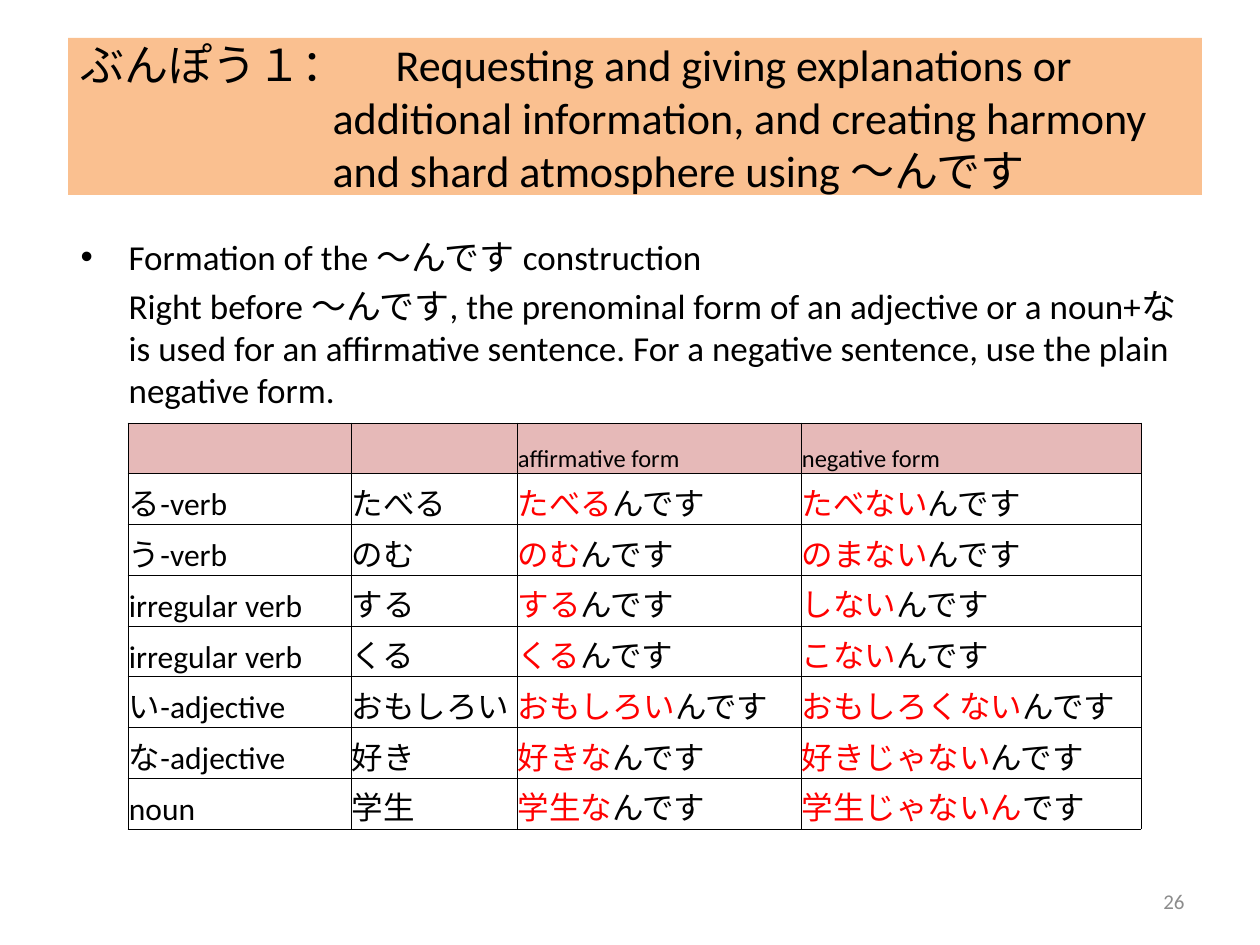
from lxml.etree import SubElement
from pptx import Presentation
from pptx.dml.color import RGBColor
from pptx.enum.text import MSO_ANCHOR, MSO_AUTO_SIZE, PP_ALIGN
from pptx.oxml.ns import qn
from pptx.util import Emu, Pt

SCALE = 914400 / 126
BLACK, RED, GREY, ORANGE, PINK = "000000", "FF0000", "8C8C8C", "FAC090", "E6B9B8"
LATIN, JAPANESE = "Calibri", "Arial"

TITLE_LINES = [
    "ぶんぽう１：\tRequesting and giving explanations or ",
    "\t\t\t\tadditional information, and creating harmony",
    "\t\t\t \tand shard atmosphere using ～んです",
]
BODY_PARAGRAPHS = [
    ["Formation of the ", "～んです", " construction"],
    ["Right before ", "～んです", ", the prenominal form of an adjective or a noun+な is used for "
     "an affirmative sentence. For a negative sentence, use the plain negative form."],
]
HEADERS = ["", "", "affirmative form", "negative form"]
FORMS = [
    ("る-verb", "たべる", ("たべる", "んです"), ("たべない", "んです")),
    ("う-verb", "のむ", ("のむ", "んです"), ("のまない", "んです")),
    ("irregular verb", "する", ("する", "んです"), ("しない", "んです")),
    ("irregular verb", "くる", ("くる", "んです"), ("こない", "んです")),
    ("い-adjective", "おもしろい", ("おもしろい", "んです"), ("おもしろくない", "んです")),
    ("な-adjective", "好き", ("好きな", "んです"), ("好きじゃない", "んです")),
    ("noun", "学生", ("学生な", "んです"), ("学生じゃないん", "です")),
]
COLUMN_WIDTHS = [223, 166, 284, 340]


def px(length):
    """Turn pixels into EMU."""
    return Emu(round(length * SCALE))


def color(value):
    """Turn a hex string into a colour."""
    return RGBColor.from_string(value)


def add_span(para, text, size, font=LATIN, ink=BLACK):
    """Add one formatted run to a paragraph."""
    span = para.add_run()
    span.text = text
    span.font.size = Pt(size)
    span.font.name = font
    span.font.color.rgb = color(ink)


def place(shape, box):
    """Move a shape to a box and return its text frame, fixed in size."""
    shape.left, shape.top, shape.width, shape.height = map(px, box)
    frame = shape.text_frame
    frame.word_wrap = True
    frame.auto_size = MSO_AUTO_SIZE.NONE
    return frame


def fill_title(shape, box):
    """Write the grammar heading on its orange band."""
    frame = place(shape, box)
    frame.vertical_anchor = MSO_ANCHOR.MIDDLE
    shape.fill.solid()
    shape.fill.fore_color.rgb = color(ORANGE)
    para = frame.paragraphs[0]
    para.alignment = PP_ALIGN.LEFT
    for index, line in enumerate(TITLE_LINES):
        if index:
            para.add_line_break()
        add_span(para, line, 25.2)


def fill_body(shape, box):
    """Write the bulleted heading and the explanation under it."""
    frame = place(shape, box)
    for index, texts in enumerate(BODY_PARAGRAPHS):
        para = frame.add_paragraph() if index else frame.paragraphs[0]
        for text, font in zip(texts, (LATIN, JAPANESE, LATIN)):
            add_span(para, text, 20, font)
        properties = para._p.get_or_add_pPr()
        properties.set("marL", str(px(48)))
        properties.set("indent", str(0 if index else -px(48)))
        if index:
            SubElement(properties, qn("a:buNone"))
        else:
            SubElement(properties, qn("a:buFont"), typeface="Arial")
            SubElement(properties, qn("a:buChar"), char="•")


def format_cell(cell, fill):
    """Set the borders, insets, anchor and fill of a cell."""
    properties = cell._tc.get_or_add_tcPr()
    for side in ("lnL", "lnR", "lnT", "lnB"):
        line = SubElement(properties, qn(f"a:{side}"), w=str(Pt(0.5)))
        paint = SubElement(line, qn("a:solidFill"))
        SubElement(paint, qn("a:srgbClr"), val=BLACK)
    cell.margin_left = cell.margin_right = cell.margin_top = px(1)
    cell.margin_bottom = 0
    cell.vertical_anchor = MSO_ANCHOR.BOTTOM
    if fill:
        cell.fill.solid()
        cell.fill.fore_color.rgb = color(fill)
    else:
        cell.fill.background()


def add_forms_table(page, box):
    """Add the table of affirmative and negative forms."""
    rows = [HEADERS, *FORMS]
    table = page.shapes.add_table(len(rows), len(HEADERS), *map(px, box)).table
    table.first_row = table.horz_banding = False
    for column, width in zip(table.columns, COLUMN_WIDTHS):
        column.width = px(width)
    for row_index, row in enumerate(rows):
        table.rows[row_index].height = px(box[3]) // len(rows)
        for column_index, content in enumerate(row):
            cell = table.cell(row_index, column_index)
            format_cell(cell, None if row_index else PINK)
            para = cell.text_frame.paragraphs[0]
            if row_index == 0:
                if content:
                    add_span(para, content, 14)
            elif column_index < 2:
                add_span(para, content, 18, JAPANESE if column_index else LATIN)
            else:
                for text, ink in zip(content, (RED, BLACK)):
                    add_span(para, text, 18, JAPANESE, ink)


def add_page_number(page, box):
    """Add the page number at the lower right."""
    frame = place(page.shapes.add_textbox(0, 0, 0, 0), box)
    frame.vertical_anchor = MSO_ANCHOR.MIDDLE
    para = frame.paragraphs[0]
    para.alignment = PP_ALIGN.RIGHT
    add_span(para, "26", 12, LATIN, GREY)


def main():
    """Build the slide and save it."""
    deck = Presentation()
    deck.slide_width, deck.slide_height = px(1260), px(945)
    page = deck.slides.add_slide(deck.slide_layouts[1])
    fill_title(page.shapes.title, (68, 38, 1134, 157))
    fill_body(page.placeholders[1], (68, 229, 1134, 195))
    add_forms_table(page, (128, 423, sum(COLUMN_WIDTHS), 406))
    add_page_number(page, (903, 876, 294, 50))
    deck.save("out.pptx")


if __name__ == "__main__":
    main()
